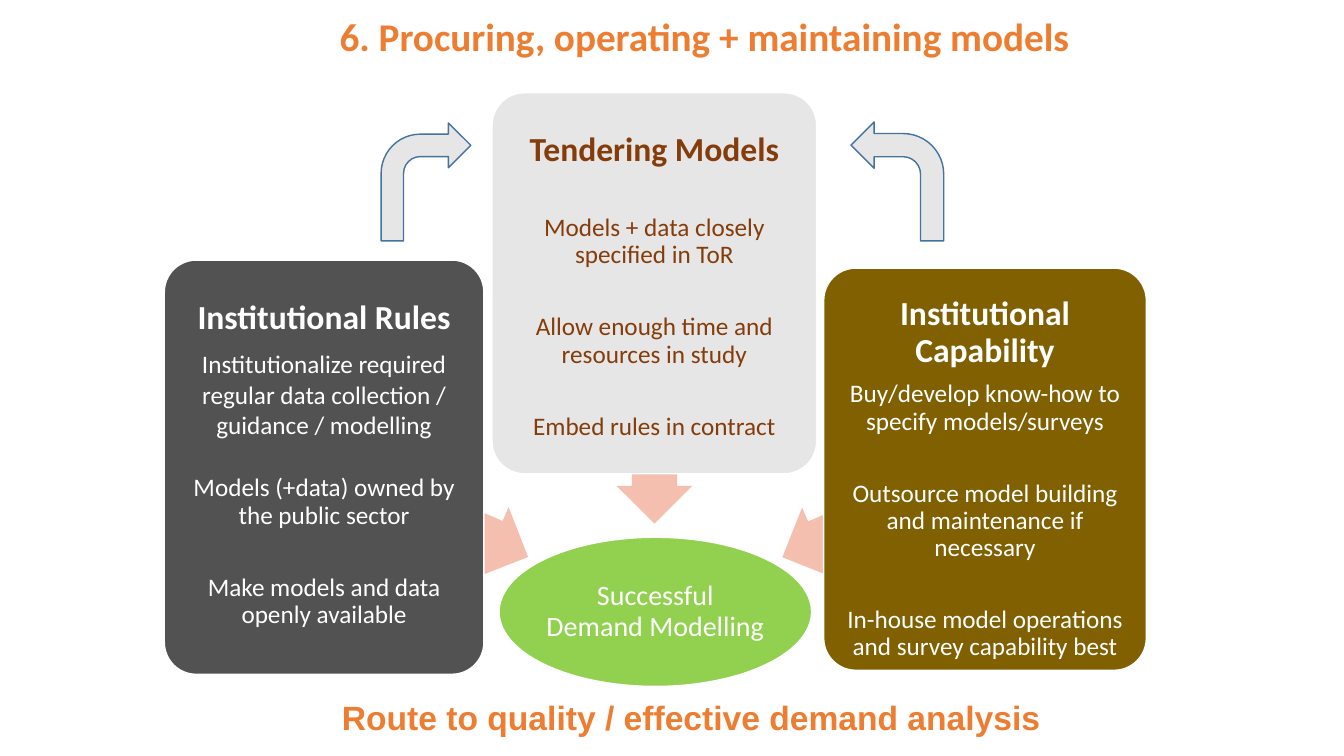
from pptx import Presentation
from pptx import util as u
from pptx.dml.color import RGBColor
from pptx.enum import shapes, text

COLOURS = {
    "orange": "ED7D31",
    "white": "FFFFFF",
    "green": "92D050",
    "salmon": "F4BFAE",
    "charcoal": "525252",
    "pale": "E7E6E6",
    "brown": "843C0B",
    "olive": "806000",
    "blue": "43739E",
}

CARDS = [
    {
        "box": (1.63, 2.58, 3.17, 4.11), "fill": "charcoal", "ink": "white", "top": 0.31,
        "heading": "Institutional Rules", "gaps": (8.4, 25.5, 32), "first_spacing": 1.0,
        "points": [
            "Institutionalize required regular data collection / guidance / modelling",
            "Models (+data) owned by the public sector",
            "Make models and data openly available",
        ],
    },
    {
        "box": (4.88, 0.92, 3.22, 3.78), "fill": "pale", "ink": "brown", "top": 0.3,
        "heading": "Tendering Models", "gaps": (33, 32, 32), "first_spacing": 0.9,
        "points": [
            "Models + data closely specified in ToR",
            "Allow enough time and resources in study",
            "Embed rules in contract",
        ],
    },
    {
        "box": (8.17, 2.66, 3.2, 3.99), "fill": "olive", "ink": "white", "top": 0.19,
        "heading": "Institutional Capability", "gaps": (8.4, 32, 32), "first_spacing": 0.9,
        "points": [
            "Buy/develop know-how to specify models/surveys",
            "Outsource model building and maintenance if necessary",
            "In-house model operations and survey capability best",
        ],
    },
]

BLOCK_ARROWS = [
    ((3.13, 4.71, 2.2, 0.75), 203.6),
    ((5.3, 3.63, 2.38, 0.75), 269.9),
    ((7.67, 4.72, 2.19, 0.75), 336.7),
]


def colour(name):
    """Return the named colour."""
    return RGBColor.from_string(COLOURS[name])


def add_outline(page, kind, box, fill, line=None):
    """Add a flat preset shape in the given box."""
    shape = page.shapes.add_shape(kind, *map(u.Inches, box))
    shape.shadow.inherit = False
    shape.fill.solid()
    shape.fill.fore_color.rgb = colour(fill)
    if line:
        shape.line.color.rgb = colour(line)
        shape.line.width = u.Pt(1)
    else:
        shape.line.fill.background()
    return shape


def set_insets(frame, side, top, bottom):
    """Set the text margins and turn wrapping on."""
    frame.word_wrap = True
    frame.margin_left = frame.margin_right = u.Inches(side)
    frame.margin_top, frame.margin_bottom = u.Inches(top), u.Inches(bottom)


def style_paragraph(para, size, ink, bold=False, font="Calibri", spacing=0.9, before=0,
                    align=text.PP_ALIGN.CENTER):
    """Format a paragraph and all its runs."""
    para.alignment = align
    para.line_spacing = spacing
    para.space_before = u.Pt(before)
    for span in para.runs:
        span.font.name = font
        span.font.size = u.Pt(size)
        span.font.bold = bold
        span.font.color.rgb = colour(ink)


def add_banner(page, box, words, size, **style):
    """Add a bold orange line of text across the slide."""
    frame = page.shapes.add_textbox(*map(u.Inches, box)).text_frame
    set_insets(frame, 0.1, 0, 0)
    frame.vertical_anchor = text.MSO_ANCHOR.MIDDLE
    frame.text = words
    style_paragraph(frame.paragraphs[0], size, "orange", bold=True, **style)


def add_card(page, card):
    """Add a rounded card with a heading and its points."""
    shape = add_outline(page, shapes.MSO_SHAPE.ROUNDED_RECTANGLE, card["box"], card["fill"], "white")
    shape.adjustments[0] = 0.1
    frame = shape.text_frame
    set_insets(frame, 0.05, card["top"], 0.05)
    frame.vertical_anchor = text.MSO_ANCHOR.TOP
    frame.text = card["heading"]
    style_paragraph(frame.paragraphs[0], 24, card["ink"], bold=True)
    spacings = (card["first_spacing"], 0.9, 0.9)
    for point, gap, spacing in zip(card["points"], card["gaps"], spacings):
        para = frame.add_paragraph()
        para.text = point
        style_paragraph(para, 18, card["ink"], spacing=spacing, before=gap)


def add_goal(page, box):
    """Add the green ellipse with the shared goal."""
    frame = add_outline(page, shapes.MSO_SHAPE.OVAL, box, "green", "white").text_frame
    set_insets(frame, 0.01, 0.01, 0.01)
    frame.vertical_anchor = text.MSO_ANCHOR.MIDDLE
    frame.text = "Successful\vDemand Modelling"
    style_paragraph(frame.paragraphs[0], 20, "white")


def add_block_arrow(page, box, angle):
    """Add a salmon arrow that points at the goal."""
    arrow = add_outline(page, shapes.MSO_SHAPE.LEFT_ARROW, box, "salmon")
    arrow.adjustments[0] = 0.6
    arrow.adjustments[1] = 0.5
    arrow.rotation = angle


def add_bent_arrow(page, box, mirrored=False):
    """Add a bent arrow towards the middle card."""
    arrow = add_outline(page, shapes.MSO_SHAPE.BENT_ARROW, box, "pale", "blue")
    if mirrored:
        arrow._element.spPr.xfrm.set("flipH", "1")


def main():
    """Build the slide and save it."""
    deck = Presentation()
    deck.slide_width, deck.slide_height = u.Inches(13.33), u.Inches(7.5)
    page = deck.slides.add_slide(deck.slide_layouts[6])
    add_banner(page, (3.27, 0.17, 7.6, 0.43), "6. Procuring, operating + maintaining models", 28,
               align=text.PP_ALIGN.LEFT)
    add_banner(page, (2.91, 6.88, 7.89, 0.46), "Route to quality / effective demand analysis", 24,
               font="Arial", spacing=1.0)
    add_goal(page, (4.95, 5.33, 3.1, 1.48))
    for (box, angle), card in zip(BLOCK_ARROWS, CARDS):
        add_block_arrow(page, box, angle)
        add_card(page, card)
    add_bent_arrow(page, (3.78, 1.22, 0.89, 1.17))
    add_bent_arrow(page, (8.44, 1.21, 0.92, 1.18), mirrored=True)
    deck.save("out.pptx")


if __name__ == "__main__":
    main()
